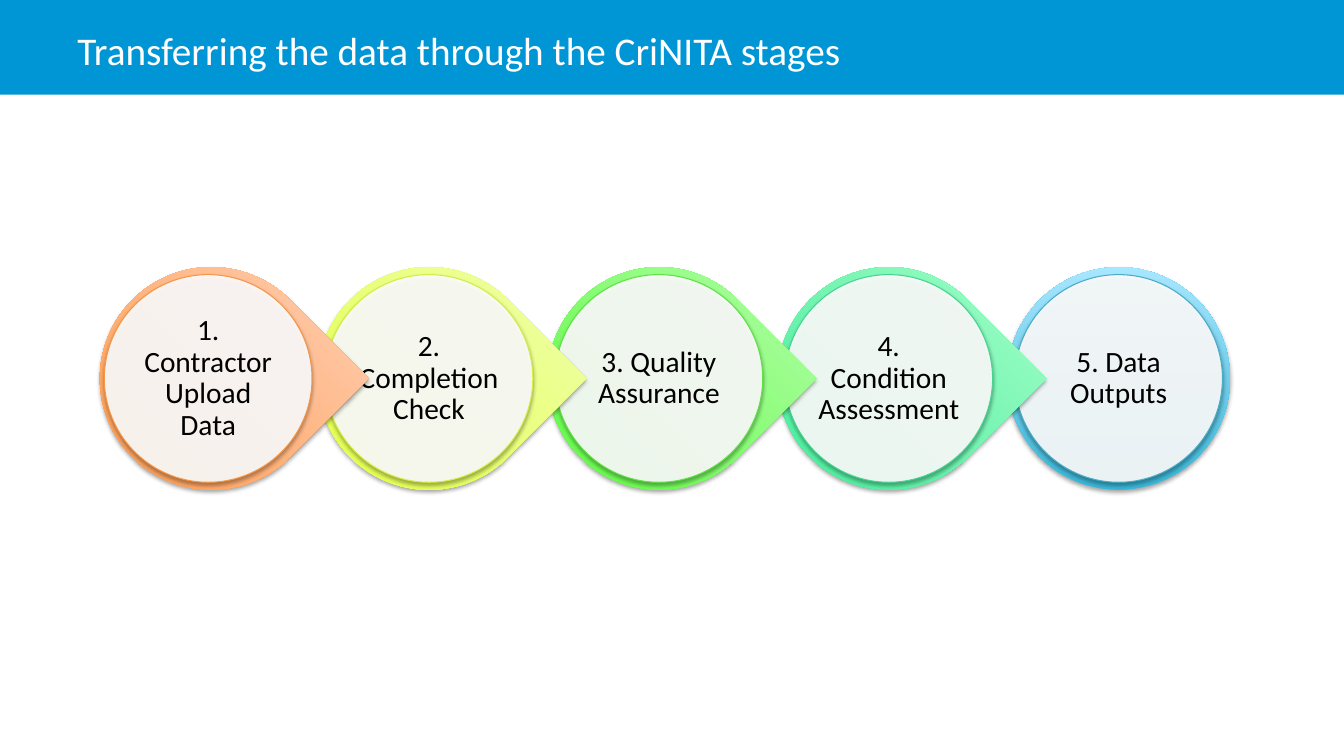
from lxml import etree
from pptx import Presentation
from pptx.dml.color import RGBColor
from pptx.enum.shapes import MSO_SHAPE
from pptx.enum.text import MSO_ANCHOR, PP_ALIGN
from pptx.oxml.ns import qn
from pptx.util import Inches, Pt

RECTANGLE, CIRCLE, TEARDROP = MSO_SHAPE.RECTANGLE, MSO_SHAPE.OVAL, MSO_SHAPE.TEAR
MIDDLE = MSO_ANCHOR.MIDDLE
LEFT, CENTER = PP_ALIGN.LEFT, PP_ALIGN.CENTER

SLIDE_W, SLIDE_H = 13.33, 7.5
BAND_H = 0.94
TITLE = "Transferring the data through the CriNITA stages"
TITLE_FORMAT = {"size": Pt(28), "name": "Calibri", "bold": False}
STAGE_FORMAT = {"size": Pt(21), "name": "Calibri", "bold": False}

# Label, dark and light ends of the ring, outline of the disc
STAGES = [
    ("1. Contractor Upload Data", "FF953E", "FFD2BD", "F79646"),
    ("2. Completion Check", "E2FF33", "F0FFB8", "D5EC46"),
    ("3. Quality Assurance", "51F82F", "B9FFB2", "60E146"),
    ("4. Condition Assessment", "33E992", "ADFFCD", "48D491"),
    ("5. Data Outputs", "39B7D8", "A7E6FF", "4BACC6"),
]
FLOW_LEFT, FLOW_TOP = 0.87, 2.65
PITCH = 2.28
RING, DISC, LABEL = 2.21, 2.06, 1.47
FIRST_RING_SHIFT, FIRST_DISC_SHIFT = 0.12, 0.09


def rgb(value):
    return RGBColor.from_string(value)


def add_preset(slide, kind, left, top, width, height):
    shape = slide.shapes.add_shape(
        kind, Inches(left), Inches(top), Inches(width), Inches(height))
    shape.shadow.inherit = False
    shape.line.fill.background()
    return shape


def set_text(frame, text, font_format, color, align):
    frame.word_wrap = True
    frame.vertical_anchor = MIDDLE
    paragraph = frame.paragraphs[0]
    paragraph.text = text
    paragraph.alignment = align
    font = paragraph.runs[0].font
    for attribute, value in font_format.items():
        setattr(font, attribute, value)
    font.color.rgb = rgb(color)
    return paragraph


def add_alpha(color_element, percent):
    etree.SubElement(color_element, qn("a:alpha"), val=str(percent * 1000))


def drop_shadow(shape):
    effects = shape._element.spPr.find(qn("a:effectLst"))
    shadow = etree.SubElement(
        effects, qn("a:outerShdw"), blurRad=str(Pt(3.1)), dist=str(Pt(1.8)),
        dir=str(90 * 60000), rotWithShape="0")
    add_alpha(etree.SubElement(shadow, qn("a:srgbClr"), val="000000"), 35)


def add_header(slide, width, height):
    band = add_preset(slide, RECTANGLE, 0, 0, width, height)
    band.fill.solid()
    band.fill.fore_color.rgb = rgb("0096D6")
    slide.shapes._spTree.insert(2, band._element)  # behind the title

    title = slide.shapes.title
    margin = width / 20
    box = {"left": margin, "top": 0.22, "width": width - 2 * margin, "height": 0.55}
    for attribute, value in box.items():
        setattr(title, attribute, Inches(value))
    set_text(title.text_frame, TITLE, TITLE_FORMAT, "FFFFFF", LEFT)


def add_ring(slide, left, top, dark, light, pointed):
    ring = add_preset(slide, TEARDROP if pointed else CIRCLE, left, top, RING, RING)
    if pointed:
        ring.adjustments[0] = 1
        ring.rotation = 45
    ring.fill.gradient()
    ring.fill.gradient_angle = 90
    for stop, color in zip(ring.fill.gradient_stops, (dark, light)):
        stop.color.rgb = rgb(color)
    drop_shadow(ring)


def add_disc(slide, left, top, outline):
    disc = add_preset(slide, CIRCLE, left, top, DISC, DISC)
    disc.fill.solid()
    disc.fill.fore_color.rgb = rgb("FFFFFF")
    add_alpha(disc._element.spPr.find(qn("a:solidFill"))[0], 90)
    disc.line.color.rgb = rgb(outline)
    disc.line.width = Pt(0.75)
    drop_shadow(disc)


def add_label(slide, left, top, text):
    label = slide.shapes.add_textbox(
        Inches(left), Inches(top), Inches(LABEL), Inches(LABEL))
    frame = label.text_frame
    for side in ("left", "top", "right", "bottom"):
        setattr(frame, f"margin_{side}", Inches(0.03))
    paragraph = set_text(frame, text, STAGE_FORMAT, "000000", CENTER)
    paragraph.line_spacing = 0.9


def add_flow(slide, left, top):
    """Stages run left to right; each point overlaps the stage after it."""
    disc_inset = (RING - DISC) / 2
    label_inset = (DISC - LABEL) / 2
    last = len(STAGES) - 1
    for index in range(last, -1, -1):
        text, dark, light, outline = STAGES[index]
        ring_left = left + index * PITCH
        disc_left = ring_left + disc_inset
        if index == 0:
            ring_left += FIRST_RING_SHIFT
            disc_left += FIRST_DISC_SHIFT
        disc_top = top + disc_inset
        add_ring(slide, ring_left, top, dark, light, pointed=index < last)
        add_disc(slide, disc_left, disc_top, outline)
        add_label(slide, disc_left + label_inset, disc_top + label_inset, text)


def main():
    deck = Presentation()
    deck.slide_width, deck.slide_height = Inches(SLIDE_W), Inches(SLIDE_H)
    slide = deck.slides.add_slide(deck.slide_layouts[5])
    add_header(slide, SLIDE_W, BAND_H)
    add_flow(slide, FLOW_LEFT, FLOW_TOP)
    deck.save("out.pptx")


if __name__ == "__main__":
    main()
